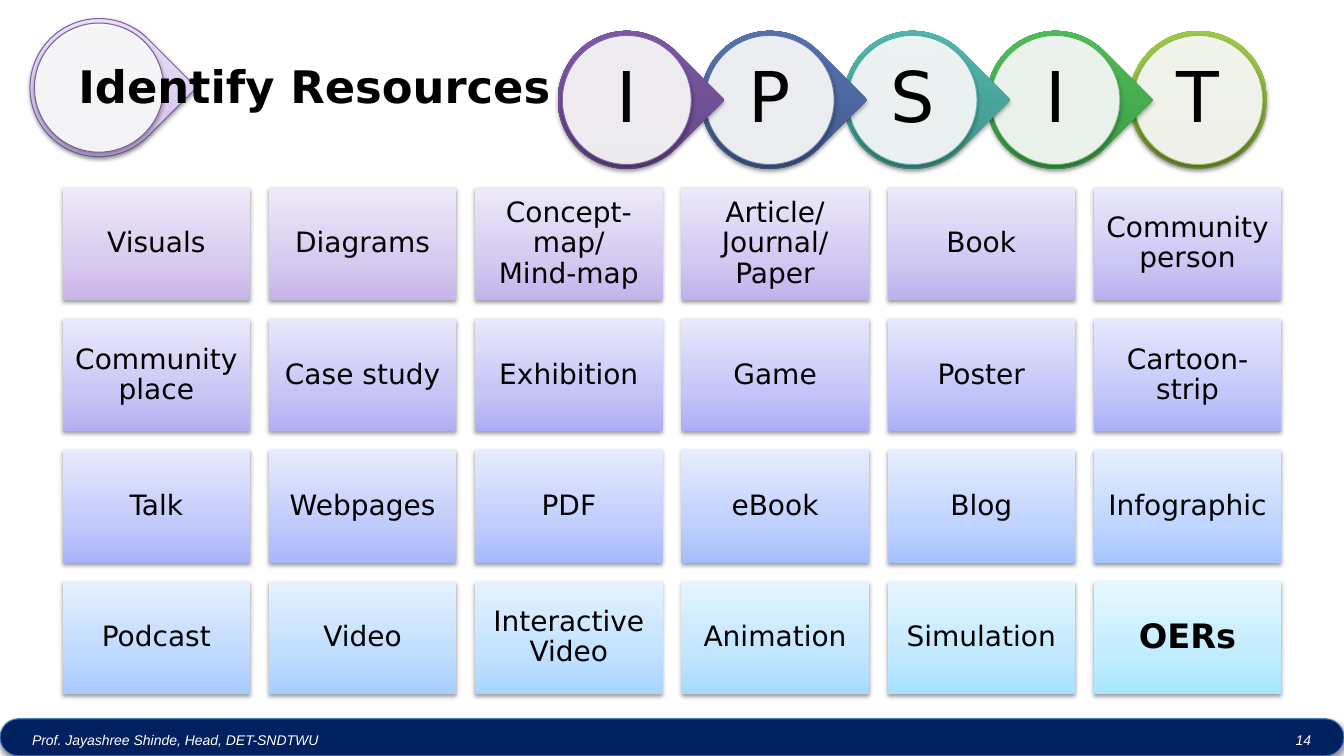
from dataclasses import dataclass

from lxml import etree
from pptx import Presentation
from pptx import util as u
from pptx.dml import color
from pptx.enum import shapes, text
from pptx.oxml import ns

SANS, ARIAL = "DejaVu Sans", "Arial"
BLACK, WHITE = "000000", "FFFFFF"
CENTER, LEFT = text.PP_ALIGN.CENTER, text.PP_ALIGN.LEFT
MIDDLE, TOP = text.MSO_ANCHOR.MIDDLE, text.MSO_ANCHOR.TOP
KIND = shapes.MSO_SHAPE

OUTER, INNER = 98.6, 92.2
COLUMNS = 6


@dataclass
class Ring:
    letter: str
    dark: str
    middle: str
    light: str
    line: str
    pointed: bool = True


@dataclass
class Tile:
    label: str
    base: str
    size: float = 20
    bold: bool = False


RINGS = [
    Ring("I", "5F4480", "7B58A6", "7C57A8", "8064A2"),
    Ring("P", "405786", "5471AE", "5271B0", "6179A8"),
    Ring("S", "3D8B83", "50B5AA", "4EB8AC", "5EAFA6"),
    Ring("I", "3A9144", "4CBC58", "4ABF57", "5CB565"),
    Ring("T", "779737", "9BC348", "9DC746", "9BBB59", pointed=False),
]

TILES = [
    Tile("Visuals", "C9B5E8"),
    Tile("Diagrams", "C6B4EA"),
    Tile("Concept-map/\vMind-map", "C2B3EB"),
    Tile("Article/ Journal/ Paper", "BFB2EC"),
    Tile("Book", "BCB1EE"),
    Tile("Community person", "B8B0EF"),
    Tile("Community place", "B5AFF1"),
    Tile("Case study", "B1AEF2"),
    Tile("Exhibition", "ADADF3"),
    Tile("Game", "ACADF5"),
    Tile("Poster", "ABAFF6"),
    Tile("Cartoon-strip", "AAB1F7"),
    Tile("Talk", "A9B3F9"),
    Tile("Webpages", "A8B6FA"),
    Tile("PDF", "A7B9FC"),
    Tile("eBook", "A6BDFD"),
    Tile("Blog", "A5C1FE"),
    Tile("Infographic", "A5C5FF"),
    Tile("Podcast", "A5CAFF"),
    Tile("Video", "A5CFFF"),
    Tile("Interactive Video", "A6D5FF"),
    Tile("Animation", "A6DAFF"),
    Tile("Simulation", "A7E0FF"),
    Tile("OERs", "A7E6FF", size=24, bold=True),
]


def rgb(value: str) -> color.RGBColor:
    return color.RGBColor.from_string(value)


def tint(base: str, share: float) -> str:
    """Mix a colour with white, keeping the given share of it."""
    parts = [int(base[i:i + 2], 16) for i in (0, 2, 4)]
    return "".join(f"{round(255 - (255 - part) * share):02X}" for part in parts)


def tinted_stops(base: str) -> list[tuple[int, str]]:
    return [(0, base), (35, tint(base, 0.71)), (100, tint(base, 0.28))]


def add_color(parent, value: str, alpha: int = 100) -> None:
    node = etree.SubElement(parent, ns.qn("a:srgbClr"), val=value)
    if alpha < 100:
        etree.SubElement(node, ns.qn("a:alpha"), val=str(alpha * 1000))


def add_shape(page, kind, left: float, top: float, width: float, height: float,
              line: str = "", distance: float = 1.6, shade: int = 38):
    """Add a shape with an outline and a soft shadow below it."""
    shape = page.shapes.add_shape(kind, u.Pt(left), u.Pt(top), u.Pt(width), u.Pt(height))
    if line:
        shape.line.color.rgb = rgb(line)
        shape.line.width = u.Pt(0.75)
    else:
        shape.line.fill.background()
    shape.shadow.inherit = False
    effects = shape._element.spPr.find(ns.qn("a:effectLst"))
    shadow = etree.SubElement(effects, ns.qn("a:outerShdw"), blurRad=str(u.Pt(3.1)),
                              dist=str(u.Pt(distance)), dir="5400000", rotWithShape="0")
    add_color(shadow, BLACK, shade)
    return shape


def fill_solid(shape, value: str, alpha: int = 100) -> None:
    shape.fill.solid()
    shape.fill.fore_color.rgb = rgb(value)
    solid = shape._element.spPr.find(ns.qn("a:solidFill"))
    solid.clear()
    add_color(solid, value, alpha)


def fill_upward(shape, stops: list[tuple[int, str]]) -> None:
    """Fill with a gradient that runs from bottom to top."""
    shape.fill.gradient()
    shape.fill.gradient_angle = 90
    gradient = shape._element.spPr.find(ns.qn("a:gradFill"))
    gradient.set("rotWithShape", "0")
    stop_list = gradient.find(ns.qn("a:gsLst"))
    stop_list.clear()
    for position, value in stops:
        add_color(etree.SubElement(stop_list, ns.qn("a:gs"), pos=str(position * 1000)), value)


def write(shape, content: str, size: float, font: str = SANS, value: str = BLACK,
          bold: bool = False, italic: bool = False, align=CENTER, anchor=MIDDLE,
          inset: float = 5.5, spacing: float = 0.9) -> None:
    frame = shape.text_frame
    frame.text = content
    frame.word_wrap = True
    frame.vertical_anchor = anchor
    frame.margin_left = frame.margin_right = u.Pt(inset)
    frame.margin_top = frame.margin_bottom = u.Pt(min(inset, 5.5))
    for para in frame.paragraphs:
        para.alignment = align
        para.line_spacing = spacing
        for span in para.runs:
            span.font.name = font
            span.font.size = u.Pt(size)
            span.font.bold = bold
            span.font.italic = italic
            span.font.color.rgb = rgb(value)


def add_text(page, left: float, top: float, width: float, height: float,
             content: str, size: float, **style) -> None:
    box = page.shapes.add_textbox(u.Pt(left), u.Pt(top), u.Pt(width), u.Pt(height))
    write(box, content, size, **style)


def add_ring(page, left: float, top: float, stops: list[tuple[int, str]], line: str,
             pointed: bool = True, outline: str = "", distance: float = 1.8, shade: int = 35):
    """Draw a ring, with a tip on the right if pointed, and return its disc."""
    kind = KIND.TEAR if pointed else KIND.OVAL
    outer = add_shape(page, kind, left, top, OUTER, OUTER, outline, distance, shade)
    fill_upward(outer, stops)
    if pointed:
        outer.adjustments[0] = 1
        outer.rotation = 45
    gap = (OUTER - INNER) / 2
    disc = add_shape(page, KIND.OVAL, left + gap, top + gap, INNER, INNER, line, 1.8, 35)
    fill_solid(disc, WHITE, 90)
    return disc


def main() -> None:
    deck = Presentation()
    deck.slide_width, deck.slide_height = u.Pt(960), u.Pt(540)
    page = deck.slides.add_slide(deck.slide_layouts[6])

    # Footer
    bar = add_shape(page, KIND.ROUNDED_RECTANGLE, 0, 513.4, 960, 26.6, "4B7EBC")
    bar.adjustments[0] = 0.5
    fill_solid(bar, "002060")
    footer = dict(font=ARIAL, value=WHITE, italic=True, anchor=TOP, inset=7.2, spacing=1)
    add_text(page, 15.8, 517, 756.7, 21.6, "Prof. Jayashree Shinde, Head, DET-SNDTWU", 10,
             align=LEFT, **footer)
    add_text(page, 910, 517, 41.8, 21.6, "14", 10, **footer)

    # Lettered rings, last one first so that each tip covers its neighbour
    for index, ring in reversed(list(enumerate(RINGS))):
        stops = [(0, ring.dark), (80, ring.middle), (100, ring.light)]
        disc = add_ring(page, 398.4 + index * 102.06, 22.1, stops, ring.line, ring.pointed)
        write(disc, ring.letter, 50, inset=0)

    # Resource tiles
    for index, tile in enumerate(TILES):
        row, column = divmod(index, COLUMNS)
        box = add_shape(page, KIND.RECTANGLE, 44.8 + column * 147.3, 133.9 + row * 93.8,
                        133.9, 80.5)
        fill_upward(box, tinted_stops(tile.base))
        write(box, tile.label, tile.size, bold=tile.bold)

    # Title
    add_ring(page, 21.4, 13.3, tinted_stops("C9B5E8"), "7D60A0", outline="7D60A0",
             distance=1.6, shade=38)
    add_text(page, 50.4, 30.2, 373.7, 66.2, "Identify Resources", 32, bold=True, align=LEFT)

    deck.save("out.pptx")


if __name__ == "__main__":
    main()
